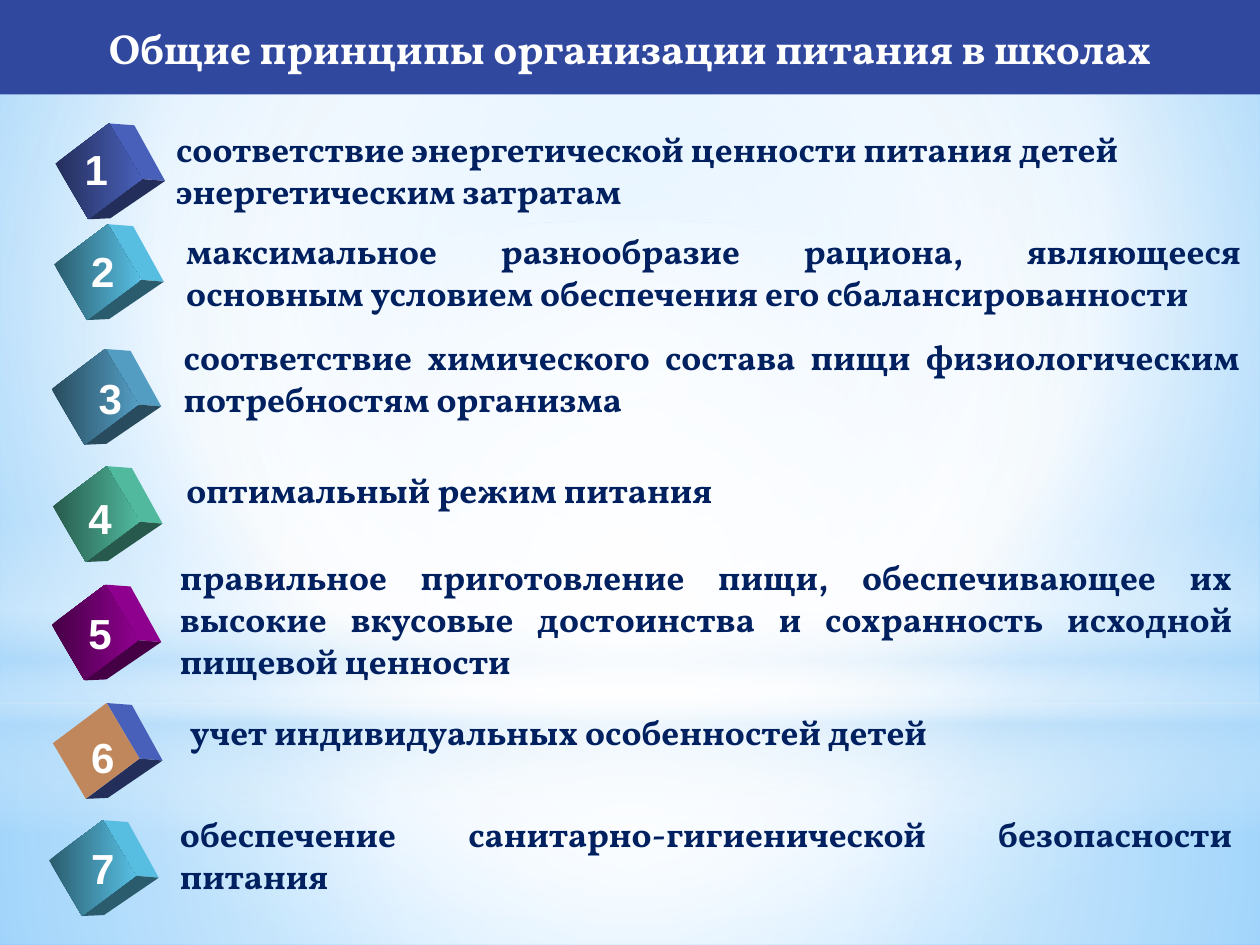
from lxml.etree import SubElement
from pptx import Presentation
from pptx.dml.color import RGBColor
from pptx.enum.shapes import MSO_SHAPE
from pptx.enum.text import MSO_ANCHOR, PP_ALIGN
from pptx.oxml.ns import qn
from pptx.util import Inches, Pt

WHITE = RGBColor(0xFF, 0xFF, 0xFF)
NAVY = RGBColor(0x00, 0x20, 0x60)
TITLE_BLUE = RGBColor(0x31, 0x48, 0x9F)
SKY = RGBColor(0x9E, 0xD5, 0xFF)
BRIGHT_SKY = RGBColor(0x5B, 0xB9, 0xFF)
PALE_SKY = RGBColor(0xB4, 0xDC, 0xFA)
INDIGO = RGBColor(0x4E, 0x67, 0xC8)
CYAN = RGBColor(0x5E, 0xCC, 0xF3)
STEEL = RGBColor(0x59, 0xA8, 0xD1)
GREEN = RGBColor(0x56, 0xC7, 0xAA)
PURPLE = RGBColor(0x99, 0x00, 0x99)
TAN = RGBColor(0xC0, 0x87, 0x5C)

CENTER = (50, 50, 50, 50)
LEFT, JUSTIFY = PP_ALIGN.LEFT, PP_ALIGN.JUSTIFY

GLOWS = [
    (MSO_SHAPE.RECTANGLE, (0, 5.58, 10, 1.92), CENTER,
     [(0, WHITE, 91), (37, WHITE, 76), (100, PALE_SKY, 79)]),
    (MSO_SHAPE.RECTANGLE, (0, 0, 10, 5.58), CENTER,
     [(0, WHITE, 89), (48, WHITE, 62), (100, PALE_SKY, 79)]),
    (MSO_SHAPE.RECTANGLE, (0, 4.12, 10, 2.5), None,
     [(0, WHITE, 0), (29, WHITE, 30), (45, PALE_SKY, 40),
      (55, WHITE, 26), (65, PALE_SKY, 60), (100, WHITE, 0)]),
    (MSO_SHAPE.OVAL, (0, 1.75, 10, 5.58), CENTER,
     [(0, WHITE, 100), (56, WHITE, 0)]),
]

CUBE_SIZE = (0.87, 0.76)
FRONT_FACE = [(0, 0.42), (0.49, 0), (0.79, 0.58), (0.3, 1)]
SIDE_FACE = [(0.49, 0), (0.72, 0.02), (1, 0.6), (0.79, 0.58)]
BOTTOM_FACE = [(0.3, 1), (0.79, 0.58), (1, 0.6), (0.5, 0.99)]

PRINCIPLES = [
    ((0.44, 0.98), INDIGO, (0.57, 1.09), (1.3, 0.96, 8.57, 0.77), LEFT,
     "соответствие энергетической ценности питания детей энергетическим затратам"),
    ((0.43, 1.78), CYAN, (0.62, 1.9), (1.38, 1.77, 8.57, 0.77), JUSTIFY,
     "максимальное разнообразие рациона, являющееся основным условием "
     "обеспечения его сбалансированности"),
    ((0.41, 2.77), STEEL, (0.68, 2.91), (1.36, 2.61, 8.58, 0.77), JUSTIFY,
     "соответствие химического состава пищи физиологическим потребностям организма"),
    ((0.42, 3.7), GREEN, (0.6, 3.86), (1.38, 3.67, 7.55, 0.44), LEFT,
     "оптимальный режим питания"),
    ((0.41, 4.64), PURPLE, (0.6, 4.77), (1.33, 4.36, 8.55, 1.11), JUSTIFY,
     "правильное приготовление пищи, обеспечивающее их высокие вкусовые "
     "достоинства и сохранность исходной пищевой ценности"),
    ((0.42, 5.58), TAN, (0.62, 5.76), (1.41, 5.59, 6.43, 0.44), LEFT,
     "учет индивидуальных особенностей детей"),
    ((0.39, 6.51), CYAN, (0.62, 6.64), (1.33, 6.4, 8.55, 0.77), JUSTIFY,
     "обеспечение санитарно-гигиенической безопасности питания"),
]


def shade(color, factor):
    """Return the colour darkened by a factor."""
    return RGBColor(*(round(channel * factor) for channel in color))


def set_gradient(fill, owner, stops, focus=None, angle=0):
    """Give a fill its stops, circular around a focus or linear at an angle."""
    fill.gradient()
    gradient = next(owner.iter(qn("a:gradFill")))
    for child in list(gradient):
        gradient.remove(child)
    stop_list = SubElement(gradient, qn("a:gsLst"))
    for position, color, opacity in stops:
        stop = SubElement(stop_list, qn("a:gs"), pos=str(position * 1000))
        tint = SubElement(stop, qn("a:srgbClr"), val=str(color))
        if opacity < 100:
            SubElement(tint, qn("a:alpha"), val=str(opacity * 1000))
    if focus:
        circle = SubElement(gradient, qn("a:path"), path="circle")
        sides = {side: str(value * 1000) for side, value in zip("ltrb", focus)}
        SubElement(circle, qn("a:fillToRect"), **sides)
    else:
        SubElement(gradient, qn("a:lin"), ang=str(angle * 60000), scaled="0")


def add_plain_shape(slide, kind, box):
    """Add a preset shape without line or shadow."""
    shape = slide.shapes.add_shape(kind, *map(Inches, box))
    shape.shadow.inherit = False
    shape.line.fill.background()
    return shape


def write_text(shape, text, font_name, size, color, alignment):
    """Write one bold paragraph into a shape."""
    paragraph = shape.text_frame.paragraphs[0]
    paragraph.text = text
    paragraph.alignment = alignment
    font = paragraph.font
    font.name, font.size, font.bold = font_name, Pt(size), True
    font.color.rgb = color


def add_background(slide):
    """Paint the sky background and its soft glows."""
    sky = [(0, SKY, 100), (60, WHITE, 100), (100, BRIGHT_SKY, 100)]
    set_gradient(slide.background.fill, slide.element, sky, (20, 10, 20, 60))
    for kind, box, focus, stops in GLOWS:
        glow = add_plain_shape(slide, kind, box)
        set_gradient(glow.fill, glow.element, stops, focus, 90)


def add_face(slide, corner, points):
    """Add one cube face from points given as shares of the cube size."""
    vertices = [
        tuple(Inches(start + share * length)
              for start, share, length in zip(corner, point, CUBE_SIZE))
        for point in points
    ]
    builder = slide.shapes.build_freeform(*vertices[0])
    builder.add_line_segments(vertices[1:], close=True)
    face = builder.convert_to_shape()
    face.shadow.inherit = False
    face.line.fill.background()
    face.fill.solid()
    return face


def add_cube(slide, corner, color, number, number_corner):
    """Draw a shaded cube with its number."""
    depth_color = INDIGO if color == TAN else color
    for points, factor in ((SIDE_FACE, 0.93), (BOTTOM_FACE, 0.45)):
        add_face(slide, corner, points).fill.fore_color.rgb = shade(depth_color, factor)
    front = add_face(slide, corner, FRONT_FACE)
    if color == TAN:
        front.fill.fore_color.rgb = color
    else:
        stops = [(0, shade(color, 0.45), 100), (100, shade(color, 0.93), 100)]
        set_gradient(front.fill, front.element, stops)
    label = slide.shapes.add_textbox(*map(Inches, (*number_corner, 0.39, 0.5)))
    label.text_frame.word_wrap = False
    write_text(label, str(number), "Arial", 24, WHITE, PP_ALIGN.CENTER)


def add_principle(slide, box, text, alignment):
    """Add the wording of one principle."""
    wording = slide.shapes.add_textbox(*map(Inches, box))
    wording.text_frame.word_wrap = True
    write_text(wording, text, "Vollkorn", 20, NAVY, alignment)


def add_title(slide, box, text):
    """Add the title band."""
    band = add_plain_shape(slide, MSO_SHAPE.RECTANGLE, box)
    band.fill.solid()
    band.fill.fore_color.rgb = TITLE_BLUE
    band.text_frame.vertical_anchor = MSO_ANCHOR.MIDDLE
    write_text(band, text, "Vollkorn", 24, WHITE, PP_ALIGN.CENTER)


def main():
    """Build and save the presentation."""
    presentation = Presentation()
    presentation.slide_width, presentation.slide_height = Inches(10), Inches(7.5)
    slide = presentation.slides.add_slide(presentation.slide_layouts[6])
    add_background(slide)
    for number, row in enumerate(PRINCIPLES, start=1):
        corner, color, number_corner, box, alignment, text = row
        add_cube(slide, corner, color, number, number_corner)
        add_principle(slide, box, text, alignment)
    add_title(slide, (0, 0, 10, 0.75), "Общие принципы организации питания в школах")
    presentation.save("out.pptx")


if __name__ == "__main__":
    main()
